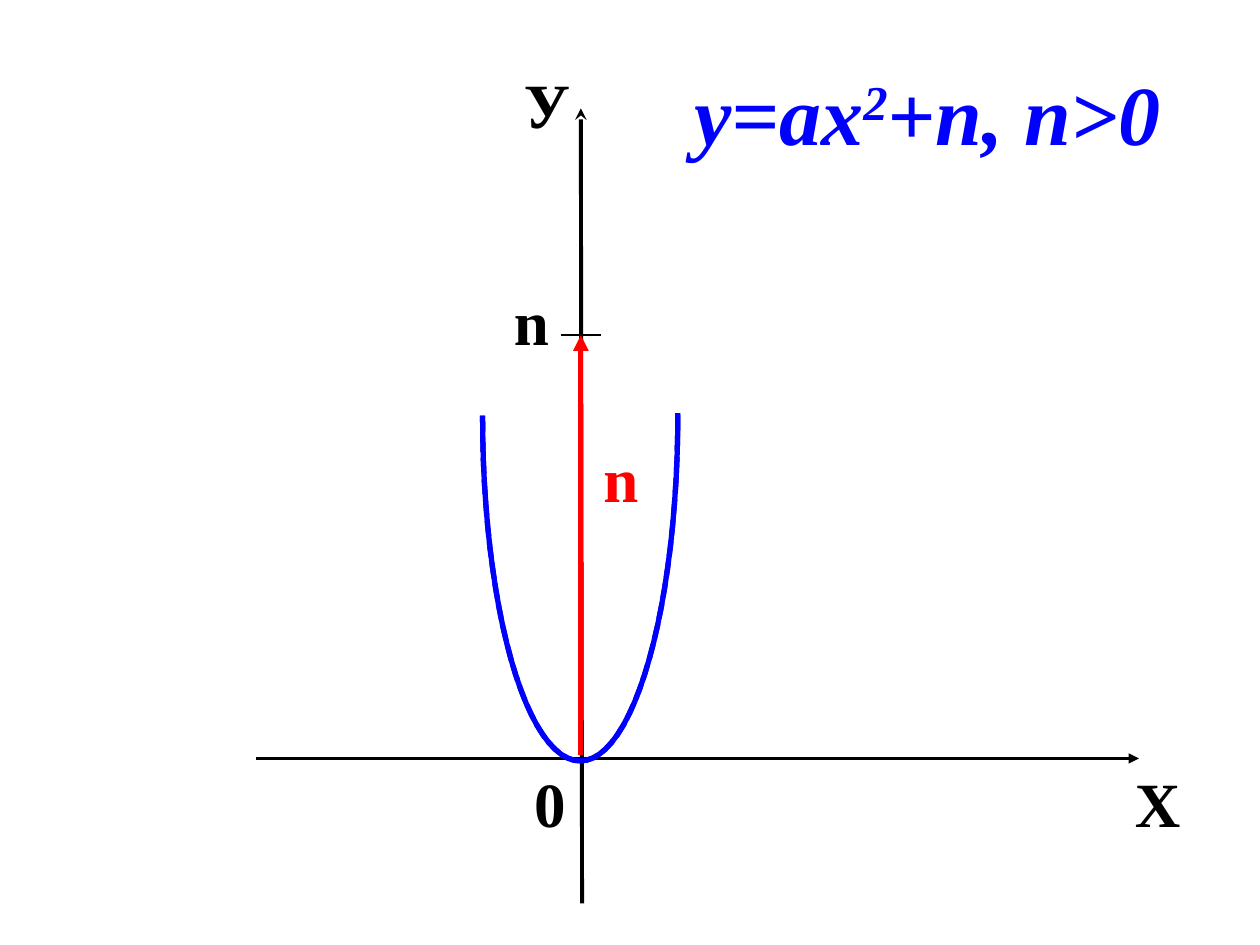
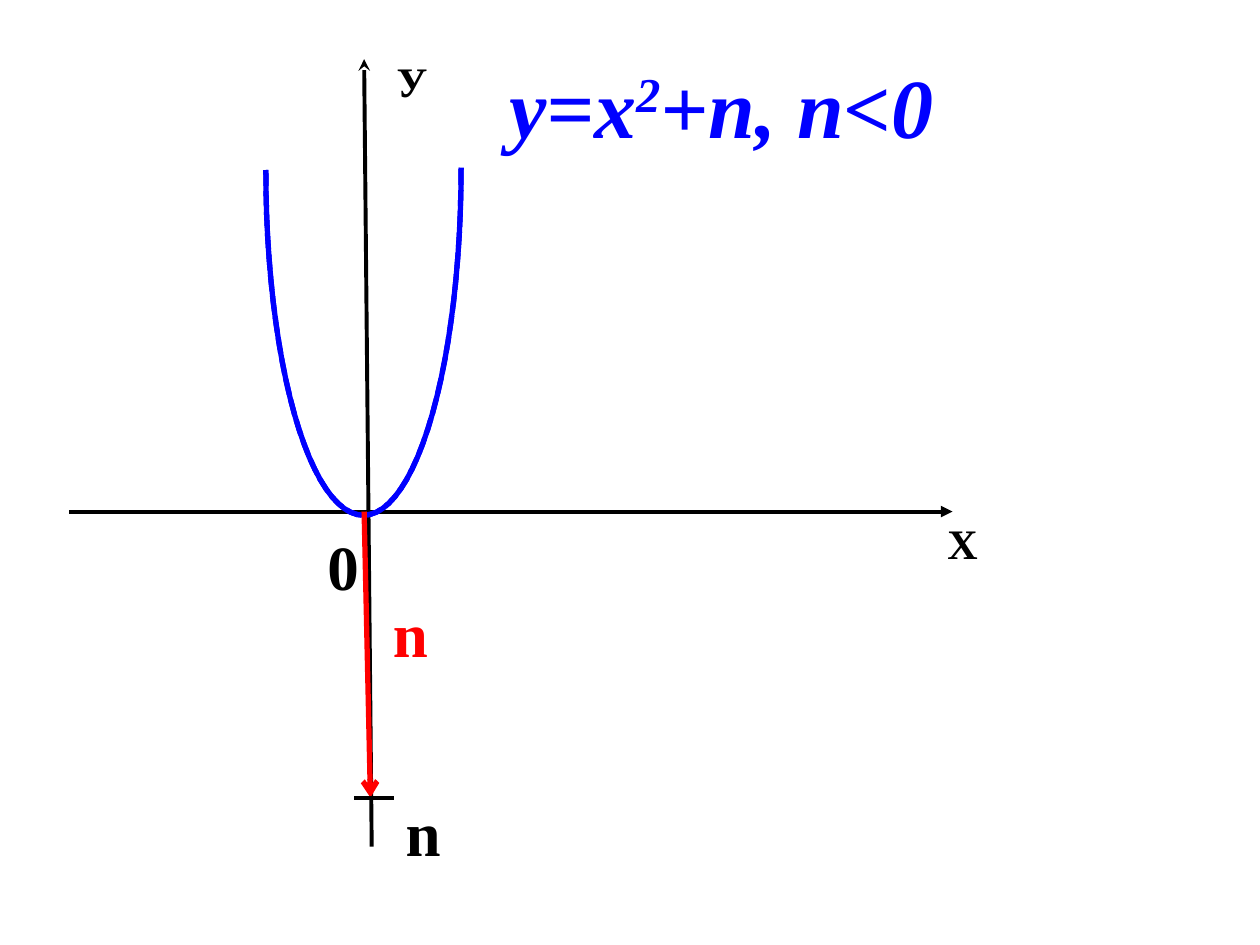
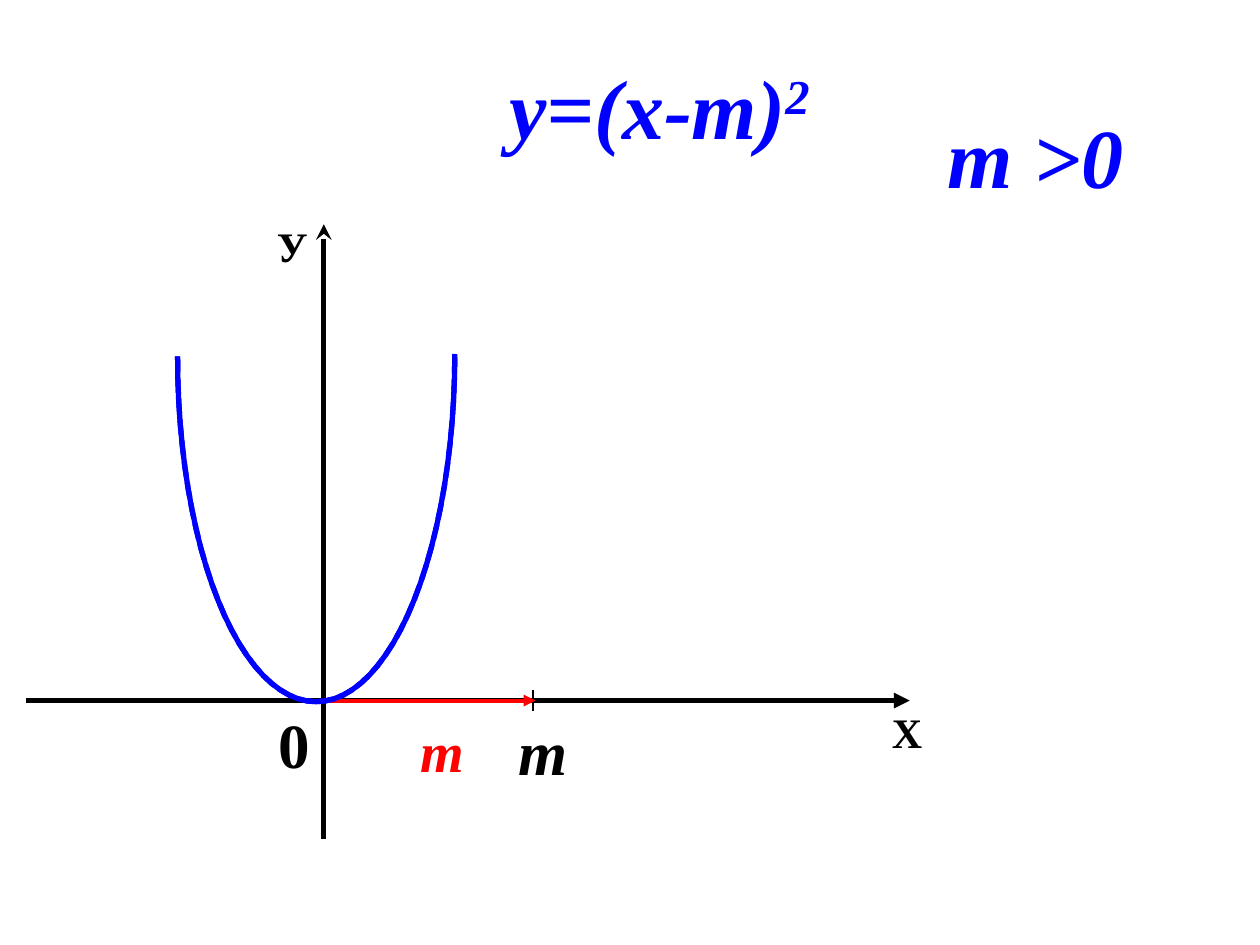
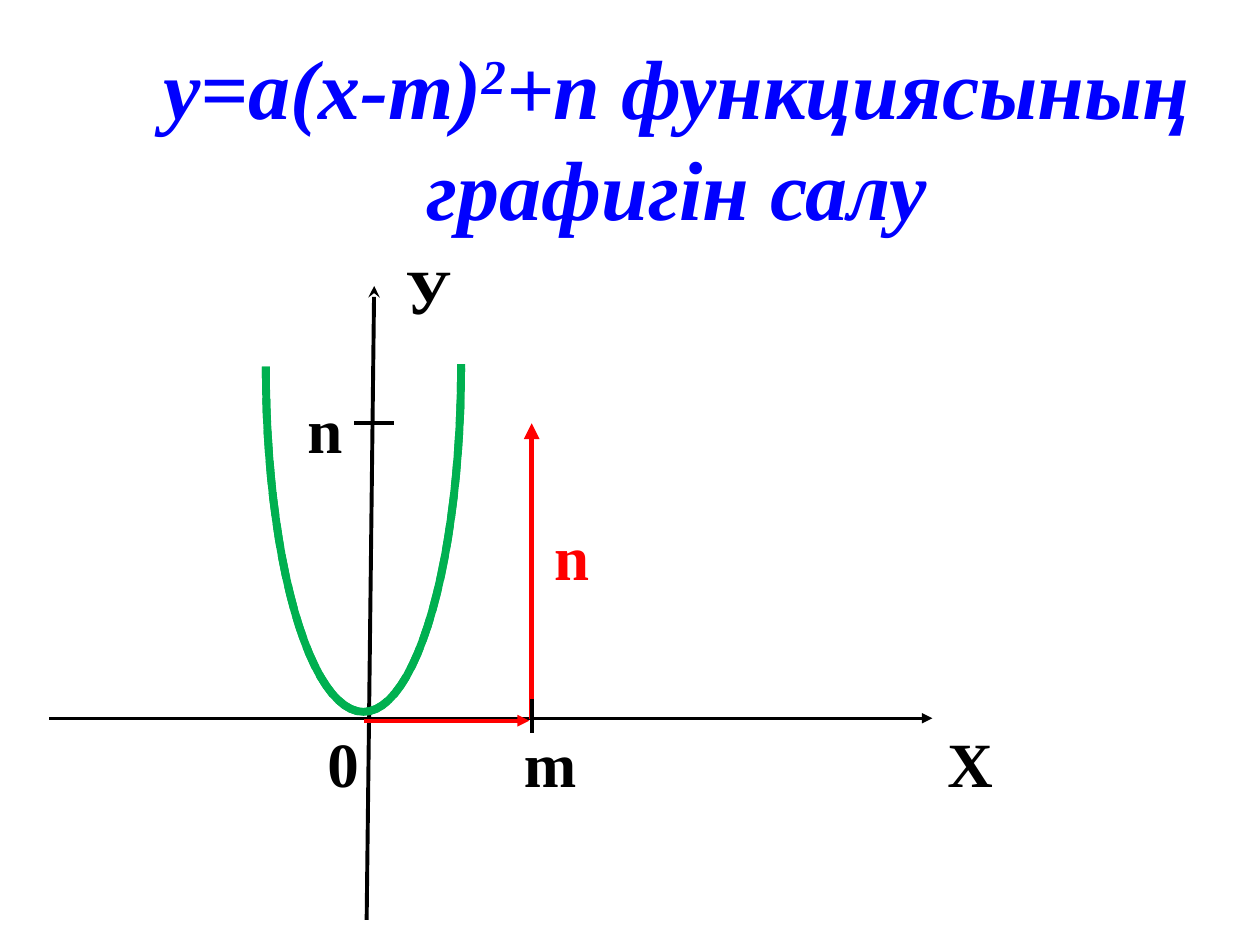
from math import cos, pi, sin

from pptx import Presentation
from pptx.dml.color import RGBColor as Rgb
from pptx.enum.dml import MSO_LINE as Dash
from pptx.enum.shapes import MSO_CONNECTOR as Conn
from pptx.enum.text import MSO_ANCHOR as Anchor, MSO_AUTO_SIZE as Auto, PP_ALIGN as Align
from pptx.oxml.ns import qn
from pptx.util import Inches, Pt
from lxml.etree import SubElement

BLACK = Rgb(0x00, 0x00, 0x00)
BLUE = Rgb(0x00, 0x00, 0xFF)
RED = Rgb(0xFF, 0x00, 0x00)
GREEN = Rgb(0x00, 0xB0, 0x50)
FONT = "Times New Roman"
STEPS = 48


class Deck:
    """Draws function graphs with shared styles on the current slide."""

    def __init__(self):
        self.prs = Presentation()
        self.prs.slide_width = Inches(10)
        self.prs.slide_height = Inches(7.5)

    def slide(self):
        """Start a slide that has a title only."""
        self.page = self.prs.slides.add_slide(self.prs.slide_layouts[5])
        self.shapes = self.page.shapes

    def run(self, par, text, size, color, italic, power=False):
        """Add one styled run, raised when it is a power."""
        run = par.add_run()
        run.text = text
        font = run.font
        font.name, font.size = FONT, Pt(size)
        font.bold, font.italic = True, italic
        font.color.rgb = color
        if power:
            run._r.get_or_add_rPr().set("baseline", "30000")

    def frame(self, box, wrap, align):
        """Set up a text frame and return its first paragraph."""
        frame = box.text_frame
        frame.word_wrap = wrap
        frame.auto_size = Auto.SHAPE_TO_FIT_TEXT
        frame.vertical_anchor = Anchor.TOP
        par = frame.paragraphs[0]
        par.alignment = align
        par.space_before = Pt(0)
        return par

    def title(self, x, y, w, h, base, rest="", wrap=False, align=Align.LEFT):
        """Write a formula with a square in the title placeholder."""
        box = self.shapes.title
        box.left, box.top = Inches(x), Inches(y)
        box.width, box.height = Inches(w), Inches(h)
        par = self.frame(box, wrap, align)
        self.run(par, base, 48, BLUE, True)
        self.run(par, "2", 48, BLUE, True, power=True)
        if rest:
            self.run(par, rest, 48, BLUE, True)

    def label(self, text, x, y, w, size=36, color=BLACK, italic=False, wrap=True):
        """Write a short label whose height follows its size."""
        high = size * 0.017 + 0.1
        box = self.shapes.add_textbox(Inches(x), Inches(y), Inches(w), Inches(high))
        self.run(self.frame(box, wrap, Align.LEFT), text, size, color, italic)

    def line(self, start, end, width, color=BLACK, head=None):
        """Draw a straight line with an optional arrowhead at its end."""
        ends = [Inches(v) for v in (*start, *end)]
        line = self.shapes.add_connector(Conn.STRAIGHT, *ends)
        line.line.color.rgb = color
        line.line.width = Pt(width)
        if head:
            SubElement(line.get_or_add_ln(), qn("a:tailEnd"), type=head)
        SubElement(line._element.spPr, qn("a:effectLst"))

    def axes(self, low, top, left, right, up, across):
        """Draw the vertical and the horizontal axis."""
        self.line(low, top, up, head="stealth")
        self.line(left, right, across, head="triangle")

    def names(self, zero, x_at, y_at, size=36):
        """Label the origin and both axes."""
        self.label("0", *zero, 0.39)
        self.label("Х", *x_at, 0.47, size)
        self.label("У", *y_at, 0.47, size)

    def curve(self, x, y, w=1.55, color=BLUE, width=3):
        """Draw the parabola as a solid arc under a dashed one."""
        pts = []
        for i in range(STEPS + 1):
            turn = pi * i / STEPS
            rim = 0.02 if turn < pi / 2 else 0
            px = x + w / 2 * (1 - cos(turn))
            py = y + rim + (2.76 - rim) * sin(turn)
            pts.append((Inches(px), Inches(py)))
        for dash in (Dash.SOLID, Dash.SQUARE_DOT):
            pen = self.shapes.build_freeform(*pts[0])
            pen.add_line_segments(pts[1:], close=False)
            arc = pen.convert_to_shape()
            arc.shadow.inherit = False
            arc.fill.background()
            arc.line.color.rgb = color
            arc.line.width = Pt(width)
            arc.line.dash_style = dash


def up_shift(deck):
    """Shift up by a positive n."""
    deck.slide()
    deck.title(5.41, 0.44, 3.97, 0.91, "у=ах", "+n, n>0")
    deck.axes((4.62, 7.17), (4.61, 0.86), (2.03, 6.02), (9.04, 6.02), 2.25, 1.5)
    deck.names((4.14, 6.02), (8.91, 6.02), (4.06, 0.47))
    deck.label("n", 3.98, 2.19, 0.55)
    deck.line((4.45, 2.66), (4.77, 2.66), 1.5)
    deck.line((4.61, 5.99), (4.61, 2.66), 3, RED, "triangle")
    deck.label("n", 4.69, 3.44, 0.78, color=RED)
    deck.curve(3.83, 3.28)


def down_shift(deck):
    """Shift down by a negative n."""
    deck.slide()
    deck.title(3.94, 0.38, 3.64, 0.91, "у=х", "+n, n<0")
    deck.axes((2.95, 6.72), (2.89, 0.47), (0.55, 4.06), (7.56, 4.06), 2.25, 2.25)
    deck.names((2.5, 4.14), (7.42, 4.06), (3.05, 0.39), 24)
    deck.curve(2.11, 1.33)
    deck.line((2.89, 4.06), (2.94, 6.33), 3, RED, "arrow")
    deck.label("n", 3.02, 4.67, 0.55, color=RED)
    deck.label("n", 3.12, 6.25, 0.55)
    deck.line((2.81, 6.33), (3.13, 6.33), 2.25)


def side_shift(deck):
    """Shift right by a positive m."""
    deck.slide()
    deck.title(3.94, 0.39, 2.64, 0.91, "у=(х-m)")
    deck.label("m >0", 7.42, 0.78, 1.61, 48, BLUE, True, wrap=False)
    deck.axes((2.57, 6.66), (2.57, 1.78), (0.21, 5.56), (7.22, 5.56), 3, 3)
    deck.names((2.11, 5.55), (6.98, 5.56), (2.1, 1.7), 24)
    deck.line((4.23, 5.48), (4.23, 5.64), 1.5)
    deck.label("m", 4.02, 5.61, 0.39, italic=True)
    deck.line((2.57, 5.56), (4.25, 5.56), 2.25, RED, "triangle")
    deck.label("m", 3.24, 5.64, 0.28, 32, RED, True)
    deck.curve(1.41, 2.81, 2.2)


def both_shifts(deck):
    """Shift right by m and up by n."""
    deck.slide()
    deck.title(0.47, 0.23, 9.8, 1.72, "у=а(х-m)", "+n функциясының графигін салу",
               wrap=True, align=Align.CENTER)
    deck.axes((2.91, 7.3), (2.97, 2.27), (0.39, 5.7), (7.4, 5.7), 2.25, 1.5)
    deck.names((2.5, 5.7), (7.42, 5.7), (3.12, 1.95))
    deck.label("n", 2.34, 3.05, 0.55)
    deck.line((2.81, 3.36), (3.13, 3.36), 2.25)
    deck.line((4.22, 5.71), (4.22, 3.36), 3, RED, "triangle")
    deck.label("n", 4.3, 4.06, 0.55, color=RED)
    deck.line((4.22, 5.55), (4.22, 5.82), 2.25)
    deck.label("m", 4.06, 5.7, 0.38)
    deck.line((2.89, 5.72), (4.2, 5.72), 2.25, RED, "triangle")
    deck.curve(2.11, 2.89, color=GREEN, width=4.5)


def main():
    """Build the four slides and save them."""
    deck = Deck()
    for draw in (up_shift, down_shift, side_shift, both_shifts):
        draw(deck)
    deck.prs.save("out.pptx")


if __name__ == "__main__":
    main()
